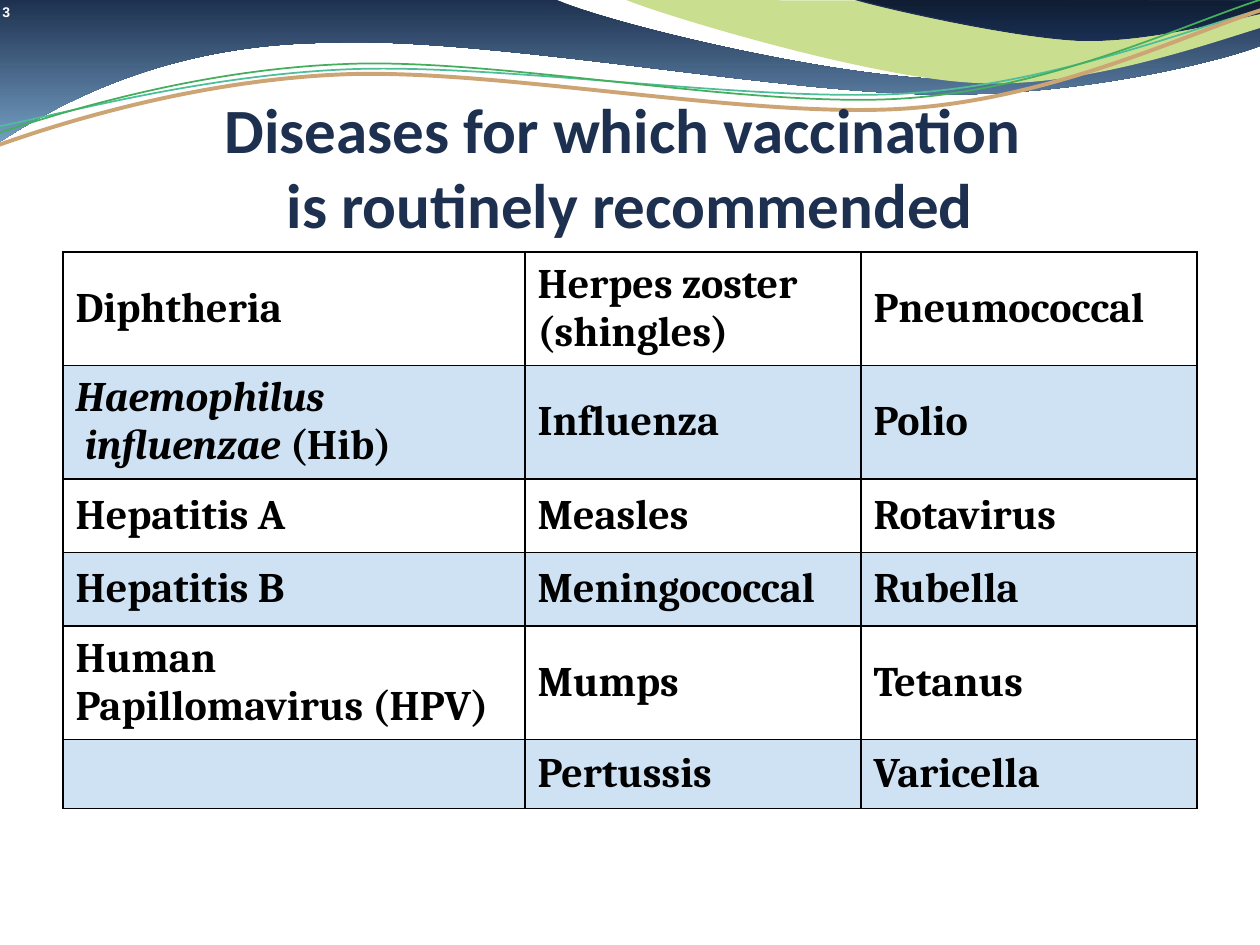
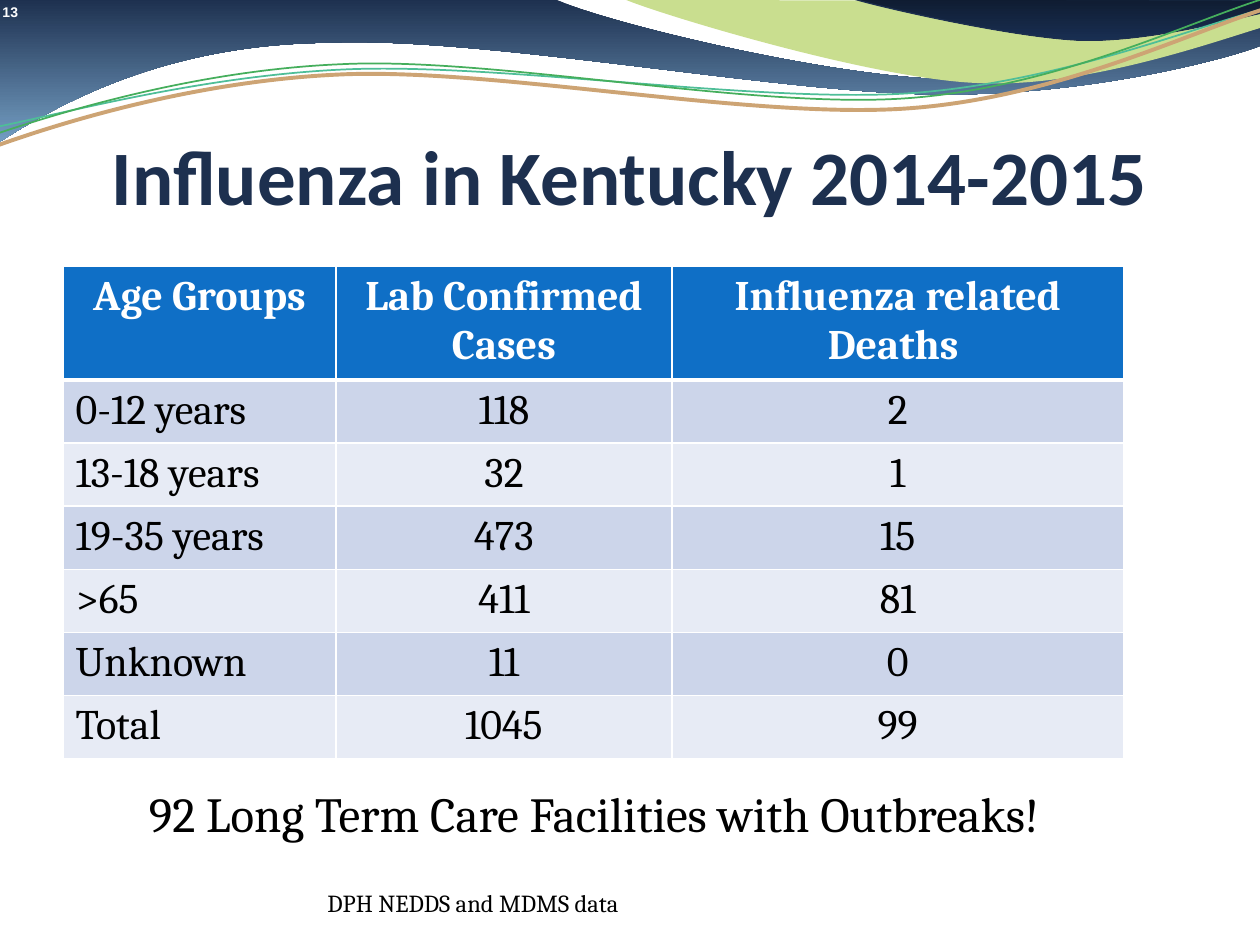
from dataclasses import dataclass
from typing import Optional

from lxml.etree import SubElement
from pptx import Presentation
from pptx.dml.color import RGBColor
from pptx.enum.text import MSO_ANCHOR, MSO_AUTO_SIZE, PP_ALIGN
from pptx.oxml.ns import qn
from pptx.util import Emu, Inches, Pt

SLIDE_WIDTH = Inches(10)
SLIDE_HEIGHT = Inches(7.5)
GRID_COLUMNS = 120
FIRST_WAVE_ID = 20


@dataclass(frozen=True)
class Theme:
    navy: str = "1D304F"
    sky: str = "739DC2"
    midnight: str = "0F1C31"
    deep_blue: str = "192F53"
    lime: str = "C9DE8F"
    teal: str = "4EBE98"
    tan: str = "CDA474"
    green: str = "45AE5C"
    header_blue: str = "0F6FC6"
    pale_blue: str = "CFE2F4"
    band_dark: str = "CCD5EA"
    band_light: str = "E7EBF5"
    black: str = "000000"
    white: str = "FFFFFF"
    title_font: str = "Calibri"
    body_font: str = "Cambria"
    number_font: str = "Arial"
    long_title_size: float = 36
    title_size: float = 44
    note_size: float = 28
    table_size: float = 24
    source_size: float = 14
    number_size: float = 8
    thin_border: float = 1
    thick_border: float = 3


THEME = Theme()


@dataclass(frozen=True)
class Box:
    column: float
    row: float
    columns: float
    rows: float

    def place(self) -> tuple:
        return tuple(grid(value) for value in (self.column, self.row, self.columns, self.rows))


@dataclass(frozen=True)
class TextStyle:
    font: str
    size: float
    color: str
    bold: bool = False


@dataclass(frozen=True)
class Wave:
    start: tuple
    steps: tuple
    fill: tuple = ()
    line: Optional[str] = None
    width: float = 1


@dataclass(frozen=True)
class TableDesign:
    box: Box
    column_spans: tuple
    row_spans: tuple
    bands: tuple
    border: str
    anchor: MSO_ANCHOR
    text: TextStyle
    header: Optional[TextStyle] = None


WAVES = (
    Wave((0, 0), (
        ((52.8, -0.12),),
        ((57.12, 2.04), (79.68, 7.56), (90.96, 7.56)),
        ((102.36, 7.56), (114.96, 3.12), (120, 1.08)),
        ((120.12, 4.32),),
        ((117.96, 5.28), (104.4, 9.12), (89.52, 9)),
        ((74.64, 9), (45.84, 3.36), (30.84, 4.08)),
        ((15.48, 4.32), (5.52, 9.96), (-0.12, 13.56)),
    ), fill=(THEME.navy, THEME.sky)),
    Wave((59.64, 0), (
        ((63.12, 1.44), (83.16, 7.56), (93.24, 7.92)),
        ((103.32, 8.4), (115.68, 3.96), (120.12, 2.64)),
        ((120.12, 0.12),),
    ), fill=(THEME.lime,)),
    Wave((81.24, -0.12), (
        ((83.52, 0.6), (96.48, 3.6), (103.08, 3.84)),
        ((109.56, 3.96), (117.48, 1.8), (120.36, 1.2)),
        ((120.36, 0),),
    ), fill=(THEME.midnight, THEME.deep_blue), line=THEME.navy, width=0.75),
    Wave((-1.8, 12.36), (
        ((3.96, 11.4), (18.36, 7.2), (33.12, 6.6)),
        ((47.88, 6), (72, 9.84), (86.64, 8.88)),
        ((101.4, 7.8), (114.36, 2.28), (121.68, 0.48)),
    ), line=THEME.teal),
    Wave((-1.44, 14.28), (
        ((4.44, 12.12), (18, 7.68), (32.64, 7.08)),
        ((47.4, 6.48), (71.64, 11.4), (86.52, 10.32)),
        ((101.4, 9.24), (114.36, 2.52), (121.68, 0.48)),
    ), line=THEME.tan, width=2.25),
    Wave((-1.68, 13.2), (
        ((4.32, 11.16), (17.88, 6.72), (32.52, 6.12)),
        ((47.16, 5.4), (71.52, 10.44), (86.4, 9.36)),
        ((101.28, 8.28), (114.24, 1.56), (121.56, -0.48)),
    ), line=THEME.green),
)

DISEASES = (
    ("Diphtheria", "Herpes zoster (shingles)", "Pneumococcal"),
    ("Haemophilus\n influenzae ", "Influenza", "Polio"),
    ("Hepatitis A", "Measles", "Rotavirus"),
    ("Hepatitis B", "Meningococcal", "Rubella"),
    ("Human Papillomavirus (HPV)", "Mumps", "Tetanus"),
    ("", "Pertussis", "Varicella"),
)
DISEASE_TEXT = TextStyle(THEME.body_font, THEME.table_size, THEME.black, bold=True)
DISEASE_DESIGN = TableDesign(
    Box(6, 24, 108, 53), (44, 32, 32), (10, 10, 7, 7, 10, 6.6),
    (THEME.white, THEME.pale_blue), THEME.black, MSO_ANCHOR.MIDDLE, DISEASE_TEXT,
)

INFLUENZA = (
    ("Age Groups", "Lab Confirmed Cases", "Influenza related Deaths "),
    ("0-12 years", "118", "2"),
    ("13-18 years", "32", "1"),
    ("19-35 years", "473", "15"),
    (">65", "411", "81"),
    ("Unknown", "11", "0"),
    ("Total", "1045", "99"),
)
INFLUENZA_DESIGN = TableDesign(
    Box(6, 25.4, 101, 45.2), (26, 32, 43), (10.4,) + (5.8,) * 6,
    (THEME.band_light, THEME.band_dark), THEME.white, MSO_ANCHOR.TOP,
    TextStyle(THEME.body_font, THEME.table_size, THEME.black),
    TextStyle(THEME.body_font, THEME.table_size, THEME.white, bold=True),
)


def grid(value: float) -> Emu:
    return Emu(round(value * SLIDE_WIDTH / GRID_COLUMNS))


def rgb(color: str) -> RGBColor:
    return RGBColor.from_string(color)


def style_run(run, style: TextStyle) -> None:
    run.font.name = style.font
    run.font.size = Pt(style.size)
    run.font.bold = style.bold
    run.font.color.rgb = rgb(style.color)


def write(text_frame, text: str, style: TextStyle, alignment: PP_ALIGN = PP_ALIGN.LEFT) -> None:
    text_frame.text = text
    for paragraph in text_frame.paragraphs:
        paragraph.alignment = alignment
        for run in paragraph.runs:
            style_run(run, style)


def set_margins(text_frame, top: float = 0) -> None:
    text_frame.margin_left = text_frame.margin_right = text_frame.margin_bottom = 0
    text_frame.margin_top = Inches(top)


def bend(shape, steps: tuple) -> None:
    segments = iter(list(shape.element.iter(qn("a:lnTo"))))
    for step in steps:
        first, *others = [next(segments) for _ in step]
        if others:
            first.tag_name = None
            curve = first.makeelement(qn("a:cubicBezTo"))
            first.addprevious(curve)
            for segment in (first, *others):
                curve.append(segment[0])
                segment.getparent().remove(segment)


def draw_wave(slide, wave: Wave):
    start, *others = [(grid(x), grid(y)) for x, y in (wave.start, *sum(wave.steps, ()))]
    builder = slide.shapes.build_freeform(*start)
    builder.add_line_segments(others, close=bool(wave.fill))
    shape = builder.convert_to_shape()
    bend(shape, wave.steps)
    shape.shadow.inherit = False
    if len(wave.fill) == 2:
        shape.fill.gradient()
        shape.fill.gradient_angle = 270
        for stop, color in zip(shape.fill.gradient_stops, wave.fill):
            stop.color.rgb = rgb(color)
    elif wave.fill:
        shape.fill.solid()
        shape.fill.fore_color.rgb = rgb(wave.fill[0])
    else:
        shape.fill.background()
    if wave.line:
        shape.line.color.rgb = rgb(wave.line)
        shape.line.width = Pt(wave.width)
    else:
        shape.line.fill.background()
    return shape


def add_waves_to_layout(slide) -> None:
    layout_tree = slide.slide_layout.shapes.element
    for index, wave in enumerate(WAVES):
        element = draw_wave(slide, wave).element
        element.nvSpPr.cNvPr.id = FIRST_WAVE_ID + index
        layout_tree.insert(2 + index, element)


def add_text(slide, box: Box, text: str, style: TextStyle):
    text_frame = slide.shapes.add_textbox(*box.place()).text_frame
    text_frame.word_wrap = True
    write(text_frame, text, style)
    return text_frame


def add_slide(presentation, number: str, title: str, title_box: Box, title_size: float):
    slide = presentation.slides.add_slide(presentation.slide_layouts.get_by_name("Title Only"))
    number_style = TextStyle(THEME.number_font, THEME.number_size, THEME.white, bold=True)
    set_margins(add_text(slide, Box(0.24, 0.36, 120, 3), number, number_style))
    placeholder = slide.shapes.title
    placeholder.left, placeholder.top, placeholder.width, placeholder.height = title_box.place()
    text_frame = placeholder.text_frame
    text_frame.auto_size = MSO_AUTO_SIZE.NONE
    text_frame.vertical_anchor = MSO_ANCHOR.BOTTOM
    set_margins(text_frame, top=0.05)
    write(text_frame, title, TextStyle(THEME.title_font, title_size, THEME.navy, bold=True), PP_ALIGN.CENTER)
    return slide


def set_borders(cell, color: str, top: float, bottom: float) -> None:
    properties = cell._tc.get_or_add_tcPr()
    widths = {"a:lnL": THEME.thin_border, "a:lnR": THEME.thin_border, "a:lnT": top, "a:lnB": bottom}
    for tag, width in widths.items():
        line = SubElement(properties, qn(tag), w=str(Pt(width)))
        SubElement(SubElement(line, qn("a:solidFill")), qn("a:srgbClr"), val=color)


def add_table(slide, rows: tuple, design: TableDesign):
    table = slide.shapes.add_table(len(rows), len(rows[0]), *design.box.place()).table
    table.first_row = design.header is not None
    table.horz_banding = False
    for column, span in zip(table.columns, design.column_spans):
        column.width = grid(span)
    for row, span in zip(table.rows, design.row_spans):
        row.height = grid(span)
    for row_index, texts in enumerate(rows):
        is_header = design.header is not None and row_index == 0
        below_header = design.header is not None and row_index == 1
        for column_index, text in enumerate(texts):
            cell = table.cell(row_index, column_index)
            set_borders(cell, design.border,
                        THEME.thick_border if below_header else THEME.thin_border,
                        THEME.thick_border if is_header else THEME.thin_border)
            cell.fill.solid()
            cell.fill.fore_color.rgb = rgb(THEME.header_blue if is_header else design.bands[row_index % 2])
            cell.vertical_anchor = design.anchor
            centred = design.header is not None and (is_header or column_index > 0)
            write(cell.text_frame, text, design.header if is_header else design.text,
                  PP_ALIGN.CENTER if centred else PP_ALIGN.LEFT)
    return table


def build_diseases(presentation) -> None:
    slide = add_slide(presentation, "3", "Diseases for which vaccination \nis routinely recommended",
                      Box(6, 9, 108, 14), THEME.long_title_size)
    add_waves_to_layout(slide)
    species = add_table(slide, DISEASES, DISEASE_DESIGN).cell(1, 0).text_frame.paragraphs
    for paragraph in species:
        paragraph.runs[0].font.italic = True
    abbreviation = species[-1].add_run()
    abbreviation.text = "(Hib)"
    style_run(abbreviation, DISEASE_TEXT)


def build_influenza(presentation) -> None:
    slide = add_slide(presentation, "13", "Influenza in Kentucky 2014-2015",
                      Box(6, 10, 108, 11), THEME.title_size)
    add_table(slide, INFLUENZA, INFLUENZA_DESIGN)
    black_note = TextStyle(THEME.body_font, THEME.note_size, THEME.black)
    add_text(slide, Box(13, 74, 98, 6.8), "92 Long Term Care Facilities with Outbreaks!", black_note)
    black_source = TextStyle(THEME.body_font, THEME.source_size, THEME.black)
    add_text(slide, Box(30, 84, 58, 4), "DPH NEDDS and MDMS data", black_source)


def main() -> None:
    presentation = Presentation()
    presentation.slide_width = SLIDE_WIDTH
    presentation.slide_height = SLIDE_HEIGHT
    build_diseases(presentation)
    build_influenza(presentation)
    presentation.save("out.pptx")


if __name__ == "__main__":
    main()
